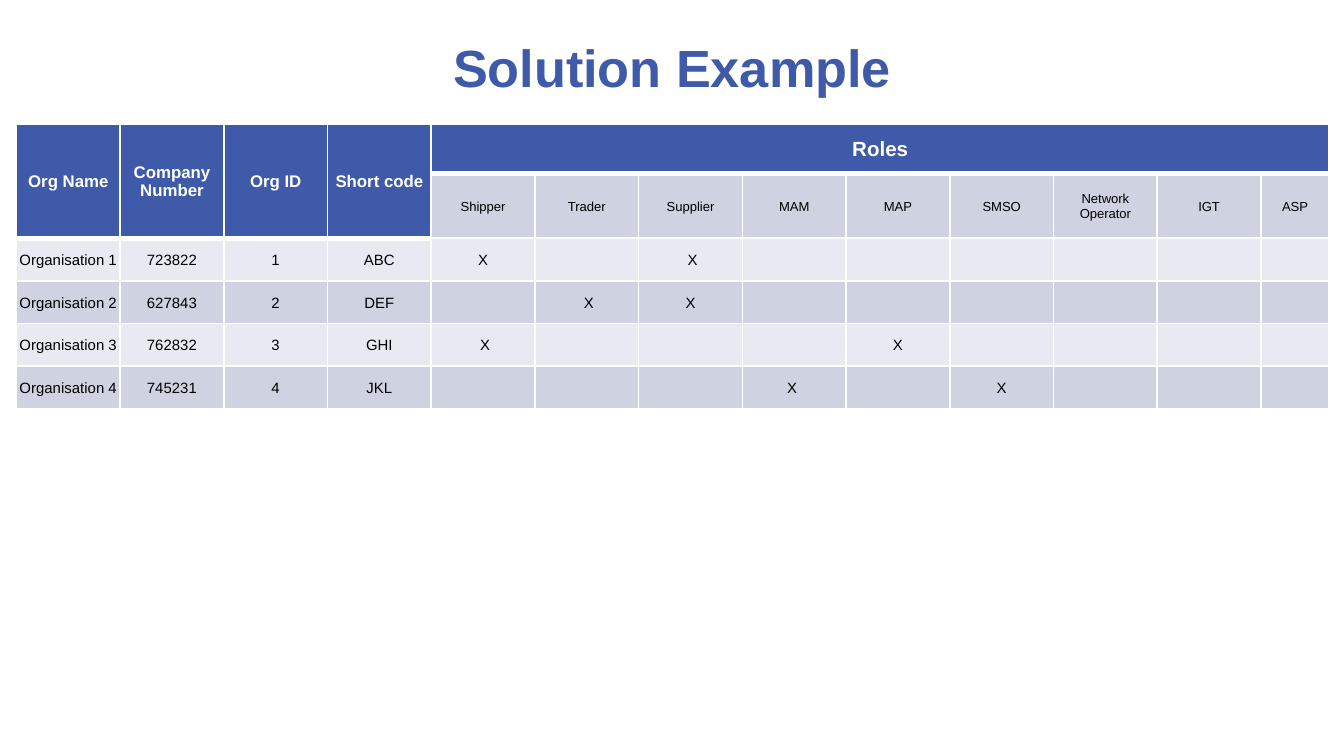
from dataclasses import dataclass

from lxml import etree
from pptx import Presentation, util as u
from pptx.dml import color
from pptx.enum import text as t
from pptx.oxml import ns

BLUE, WHITE, BLACK = "3E5AA8", "FFFFFF", "000000"
DARK, LIGHT = "CED2E1", "E8EAF1"
THIN, THICK = 1, 3
ROLES = ["Shipper", "Trader", "Supplier", "MAM", "MAP", "SMSO",
         "Network Operator", "IGT", "ASP"]
HEADS = ["Org Name", "Company Number", "Org ID", "Short code"]
WIDTHS = [1.96] * 12 + [1.29]
HEIGHTS = [0.94, 1.22] + [0.76] * 4


@dataclass
class Org:
    name: str
    number: str
    code: str
    marks: dict[str, str]


ORGS = [
    Org("Organisation 1", "723822", "ABC", {"Shipper": "X", "Supplier": " X"}),
    Org("Organisation 2", "627843", "DEF", {"Trader": " X", "Supplier": "X"}),
    Org("Organisation 3", "762832", "GHI", {"Shipper": " X", "MAP": "X"}),
    Org("Organisation 4", "745231", "JKL", {"MAM": "X ", "SMSO": "X"}),
]


def rgb(code: str) -> color.RGBColor:
    return color.RGBColor.from_string(code)


def write(frame, words: str, *, size: float, ink: str = BLACK,
          bold: bool = False) -> None:
    para = frame.paragraphs[0]
    para.alignment = t.PP_ALIGN.CENTER
    if words:
        run = para.add_run()
        run.text = words
        font = run.font
        font.name, font.size, font.bold = "Arial", u.Pt(size), bold
        font.color.rgb = rgb(ink)


def edge(cell, side: str, width: float) -> None:
    line = etree.SubElement(cell._tc.get_or_add_tcPr(), ns.qn(f"a:ln{side}"),
                            w=str(u.Pt(width)))
    fill = etree.SubElement(line, ns.qn("a:solidFill"))
    etree.SubElement(fill, ns.qn("a:srgbClr"), val=WHITE)


def paint(cell, fill: str, top: float = THIN, base: float = THIN) -> None:
    for side, width in zip("LRTB", (THIN, THIN, top, base)):
        edge(cell, side, width)
    cell.fill.solid()
    cell.fill.fore_color.rgb = rgb(fill)
    cell.vertical_anchor = t.MSO_ANCHOR.MIDDLE
    cell.margin_left = cell.margin_right = cell.margin_top = u.Cm(0.03)
    cell.margin_bottom = 0


def draw_heads(grid) -> None:
    split = len(HEADS)
    for col in range(len(WIDTHS)):
        paint(grid.cell(0, col), BLUE, base=THICK)
        if col < split:
            paint(grid.cell(1, col), BLUE, base=THICK)
        else:
            paint(grid.cell(1, col), DARK, top=THICK)
    for col, head in enumerate(HEADS):
        cell = grid.cell(0, col)
        cell.merge(grid.cell(1, col))
        write(cell.text_frame, head, size=9, ink=WHITE, bold=True)
    cell = grid.cell(0, split)
    cell.merge(grid.cell(0, len(WIDTHS) - 1))
    write(cell.text_frame, "Roles", size=11, ink=WHITE, bold=True)
    for col, role in enumerate(ROLES, split):
        write(grid.cell(1, col).text_frame, role, size=7)


def draw_org(grid, rank: int, org: Org) -> None:
    row = rank + 1
    words = [org.name, org.number, str(rank), org.code]
    words += [org.marks.get(role, "") for role in ROLES]
    for col, word in enumerate(words):
        cell = grid.cell(row, col)
        first = rank == 1 and col < len(HEADS)
        paint(cell, LIGHT if rank % 2 else DARK, top=THICK if first else THIN)
        write(cell.text_frame, word, size=8)


def main() -> None:
    deck = Presentation()
    deck.slide_width, deck.slide_height = u.Cm(25.4), u.Cm(14.29)
    slide = deck.slides.add_slide(deck.slide_layouts[5])

    title = slide.shapes.title
    title.left, title.top = u.Cm(1.27), u.Cm(0.36)
    title.width, title.height = u.Cm(22.86), u.Cm(1.78)
    title.text_frame.vertical_anchor = t.MSO_ANCHOR.MIDDLE
    write(title.text_frame, "Solution Example", size=28, ink=BLUE, bold=True)

    grid = slide.shapes.add_table(
        len(HEIGHTS), len(WIDTHS), u.Cm(0.31), u.Cm(2.34),
        u.Cm(sum(WIDTHS)), u.Cm(sum(HEIGHTS))).table
    grid.first_row = grid.horz_banding = False
    for col, width in zip(grid.columns, WIDTHS):
        col.width = u.Cm(width)
    for row, height in zip(grid.rows, HEIGHTS):
        row.height = u.Cm(height)
    draw_heads(grid)
    for rank, org in enumerate(ORGS, 1):
        draw_org(grid, rank, org)

    deck.save("out.pptx")


if __name__ == "__main__":
    main()
